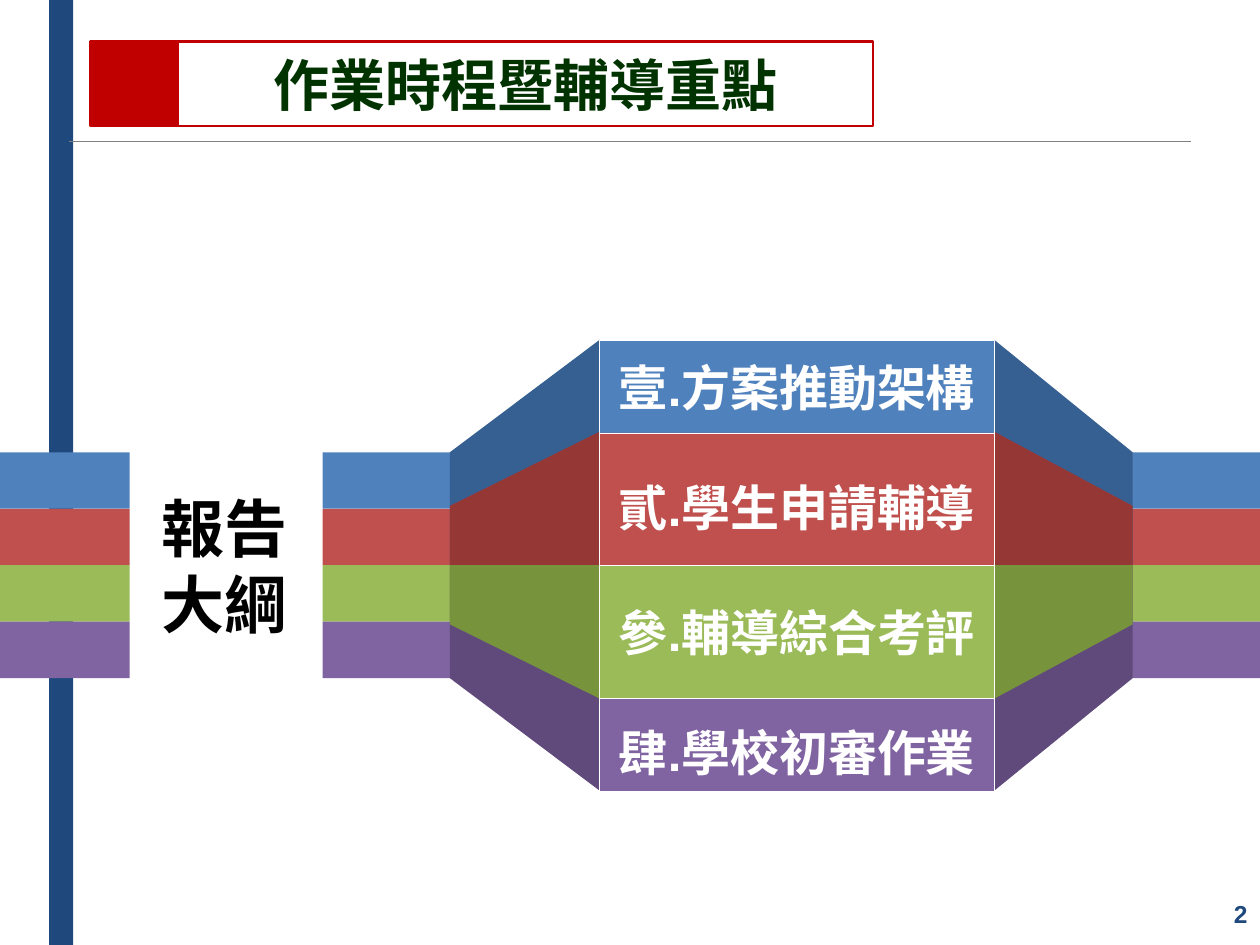
from lxml import etree
from pptx import Presentation
from pptx import util as u
from pptx.dml.color import RGBColor
from pptx.enum import shapes, text
from pptx.oxml.ns import qn

BLUE, RED = RGBColor(0x4F, 0x81, 0xBD), RGBColor(0xC0, 0x50, 0x4D)
GREEN, PURPLE = RGBColor(0x9B, 0xBB, 0x59), RGBColor(0x80, 0x64, 0xA2)
DARK_BLUE, DARK_RED = RGBColor(0x37, 0x60, 0x92), RGBColor(0x95, 0x37, 0x35)
DARK_GREEN, DARK_PURPLE = RGBColor(0x77, 0x93, 0x3C), RGBColor(0x60, 0x4A, 0x7B)
NAVY, CRIMSON = RGBColor(0x1F, 0x49, 0x7D), RGBColor(0xC0, 0, 0)
FOREST, GRAY = RGBColor(0, 0x33, 0), RGBColor(0x80, 0x80, 0x80)
WHITE, BLACK = RGBColor(255, 255, 255), RGBColor(0, 0, 0)
COLS, ROWS = 100, 75
CENTER, RIGHT = text.PP_ALIGN.CENTER, text.PP_ALIGN.RIGHT


class Deck:
    font = "Arial"

    def __init__(self):
        self.prs = Presentation()
        self.prs.slide_width, self.prs.slide_height = u.Inches(10), u.Inches(7.5)
        self.s = self.prs.slides.add_slide(self.prs.slide_layouts[5])

    def x(self, col):
        return round(self.prs.slide_width * col / COLS)

    def y(self, row):
        return round(self.prs.slide_height * row / ROWS)

    def box(self, c, r, w, h):
        return self.x(c), self.y(r), self.x(w), self.y(h)

    def paint(self, sp, fill, line=None, width=0.25):
        sp.fill.solid()
        sp.fill.fore_color.rgb = fill
        if line is None:
            sp.line.fill.background()
        else:
            sp.line.color.rgb = line
            sp.line.width = u.Pt(width)

    def rect(self, at, fill, line=None, width=0.25):
        sp = self.s.shapes.add_shape(shapes.MSO_SHAPE.RECTANGLE, *self.box(*at))
        sp.shadow.inherit = False
        self.paint(sp, fill, line, width)
        return sp

    def polygon(self, points, fill):
        start, *rest = [(self.x(c), self.y(r)) for c, r in points]
        fb = self.s.shapes.build_freeform(*start)
        fb.add_line_segments(rest, close=True)
        sp = fb.convert_to_shape()
        sp.shadow.inherit = False
        self.paint(sp, fill)

    def rule(self, c1, c2, row, color):
        sp = self.s.shapes.add_connector(shapes.MSO_CONNECTOR.STRAIGHT,
                                         self.x(c1), self.y(row), self.x(c2), self.y(row))
        sp.line.color.rgb = color
        sp.line.width = u.Pt(0.25)
        etree.SubElement(sp._element.spPr, qn("a:effectLst"))

    def set_text(self, sp, words, size, color, align=CENTER, spacing=None, font=None, wrap=False):
        tf = sp.text_frame
        tf.text = words
        tf.auto_size = text.MSO_AUTO_SIZE.NONE
        tf.word_wrap = wrap
        tf.vertical_anchor = text.MSO_ANCHOR.MIDDLE
        for p in tf.paragraphs:
            p.alignment = align
            if spacing:
                p.line_spacing = spacing
            p.font.name = font or self.font
            p.font.size = u.Pt(size)
            p.font.bold = True
            p.font.color.rgb = color

    def label(self, at, words, size, color, **style):
        self.set_text(self.s.shapes.add_textbox(*self.box(*at)), words, size, color, **style)

    def title(self, at, words):
        sp = self.s.shapes.title
        sp.left, sp.top, sp.width, sp.height = self.box(*at)
        self.paint(sp, WHITE, CRIMSON, 1.5)
        self.set_text(sp, words, 32, FOREST, font="Noto Sans CJK SC")


def main():
    d = Deck()
    d.rect((3.9, 0, 1.9, 75), NAVY)
    d.rule(5.5, 94.5, 11.2, GRAY)
    d.title((14.1, 3.3, 55.2, 6.7), "作業時程暨輔導重點")
    d.rect((7.2, 3.3, 6.9, 6.7), CRIMSON, CRIMSON, 1.5)

    top, band, middle = 35.9, 4.48, 44.86
    for left, width in ((0, 10.3), (25.6, 10.2), (89.8, 10.2)):
        for i, color in enumerate((BLUE, RED, GREEN, PURPLE)):
            d.rect((left, top + i * band, width, band), color)

    wedges = ((8.96, 17.9, DARK_BLUE, DARK_PURPLE), (4.7, 10.6, DARK_RED, DARK_GREEN))
    for outer, inner in ((35.7, 47.6), (89.9, 78.9)):
        for near, far, upper, lower in wedges:
            for sign, color in ((-1, upper), (1, lower)):
                d.polygon([(outer, middle), (outer, middle + sign * near),
                           (inner, middle + sign * far), (inner, middle)], color)

    row = 27
    for words, height, color, spacing in (("壹.方案推動架構", 7.35, BLUE, None),
                                          ("貳.學生申請輔導", 10.55, RED, 1.25),
                                          ("參.輔導綜合考評", 10.55, GREEN, None),
                                          ("肆.學校初審作業", 7.35, PURPLE, 1.25)):
        sp = d.rect((47.6, row, 31.3, height), color, WHITE)
        d.set_text(sp, words, 28, WHITE, spacing=spacing)
        row += height

    d.label((10.3, top, 15.1, 4 * band), "報告\n大綱", 36, BLACK)
    d.label((86.9, 70.3, 13.1, 4.4), "2", 14, NAVY, align=RIGHT, wrap=True)
    d.prs.save("out.pptx")


if __name__ == "__main__":
    main()
